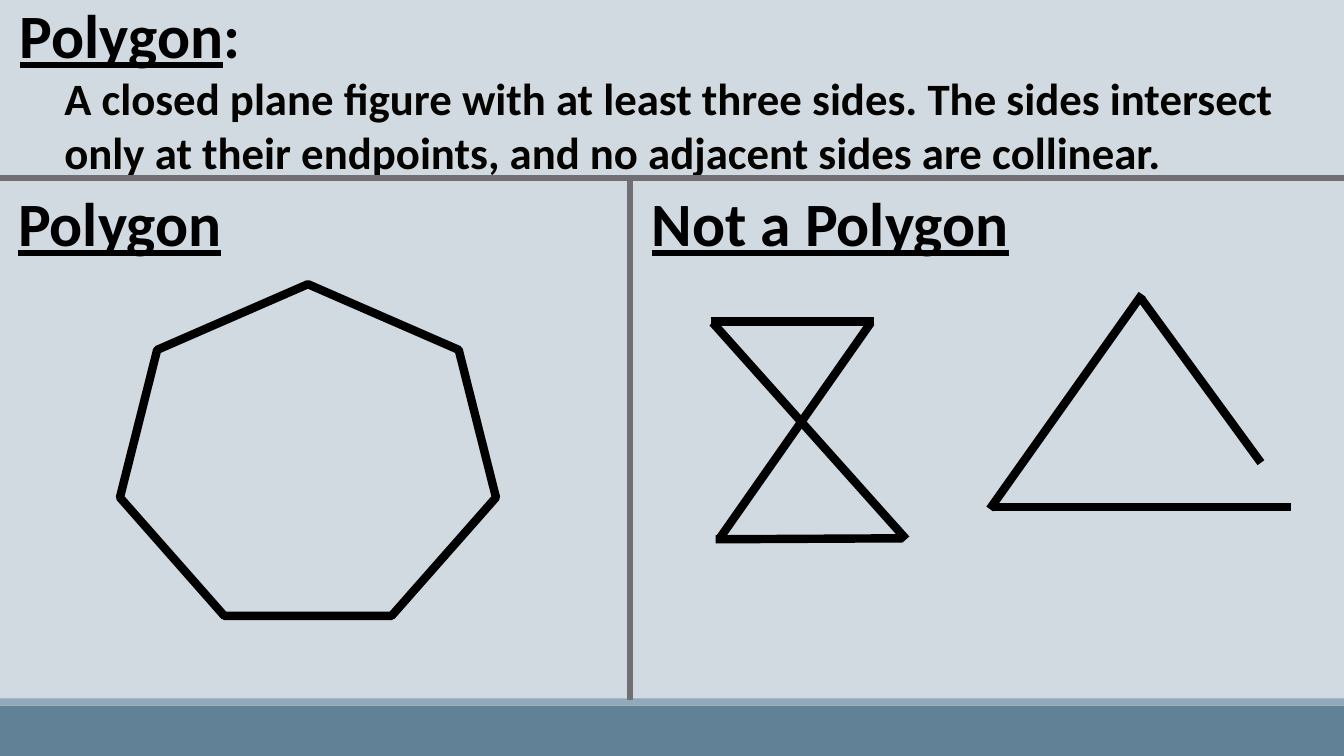
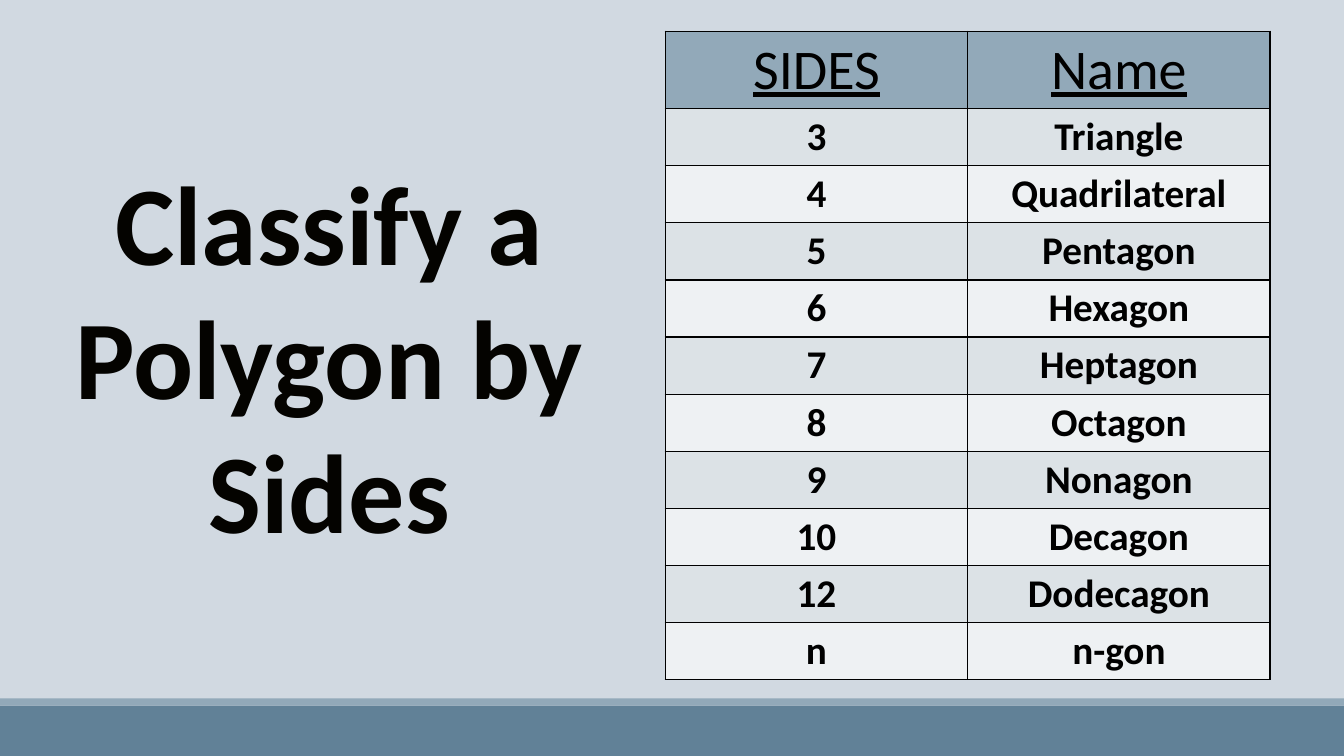
from pptx import Presentation
from pptx.dml.color import RGBColor
from pptx.enum.shapes import MSO_CONNECTOR, MSO_SHAPE
from pptx.enum.text import MSO_ANCHOR, MSO_AUTO_SIZE, PP_ALIGN
from pptx.oxml.ns import qn
from pptx.util import Pt
from lxml import etree

RECT, HEPTAGON = MSO_SHAPE.RECTANGLE, MSO_SHAPE.HEPTAGON
STRAIGHT = MSO_CONNECTOR.STRAIGHT
LEFT, CENTER = PP_ALIGN.LEFT, PP_ALIGN.CENTER
MIDDLE = MSO_ANCHOR.MIDDLE
GROW = MSO_AUTO_SIZE.SHAPE_TO_FIT_TEXT

WIDTH, HEIGHT = 960, 540
FONT = "Calibri"
BACKGROUND, BAND, ACCENT = "D1D9E1", "618197", "92A9B9"
BLACK, INK, RULE = "000000", "040300", "6F6F74"
STRIPES = "EEF1F3", "DCE2E6"


def color(value):
    return RGBColor.from_string(value)


def write(p, text, size, fill=BLACK, bold=True, underline=False, align=LEFT):
    p.alignment = align
    r = p.add_run()
    r.text = text
    r.font.name = FONT
    r.font.size = Pt(size)
    r.font.color.rgb = color(fill)
    r.font.bold = bold
    r.font.underline = underline


class Deck:
    def __init__(self):
        self.prs = Presentation()
        self.prs.slide_width, self.prs.slide_height = Pt(WIDTH), Pt(HEIGHT)
        fill = self.prs.slide_master.background.fill
        fill.solid()
        fill.fore_color.rgb = color(BACKGROUND)

    def slide(self):
        self.s = self.prs.slides.add_slide(self.prs.slide_layouts[6])
        self.shape(RECT, 0, 504, WIDTH, 36, BAND)
        self.shape(RECT, 0, 498.9, WIDTH, 5.1, ACCENT)

    def shape(self, kind, x, y, w, h, fill, line=None, weight=6):
        sp = self.s.shapes.add_shape(kind, Pt(x), Pt(y), Pt(w), Pt(h))
        sp.shadow.inherit = False
        sp.fill.solid()
        sp.fill.fore_color.rgb = color(fill)
        if line:
            sp.line.color.rgb = color(line)
            sp.line.width = Pt(weight)
        else:
            sp.line.fill.background()

    def line(self, x1, y1, x2, y2, stroke=BLACK, weight=6):
        sp = self.s.shapes.add_connector(STRAIGHT, Pt(x1), Pt(y1), Pt(x2), Pt(y2))
        sp.line.color.rgb = color(stroke)
        sp.line.width = Pt(weight)
        etree.SubElement(sp._element.spPr, qn("a:effectLst"))

    def text(self, text, x, y, w, h, size, wrap=True, **style):
        sp = self.s.shapes.add_textbox(Pt(x), Pt(y), Pt(w), Pt(h))
        tf = sp.text_frame
        tf.word_wrap = wrap
        tf.auto_size = GROW
        p = tf.paragraphs[0]
        write(p, text, size, **style)
        return p

    def heading(self, text, x, y, w):
        return self.text(text, x, y, w, 72.7, 44, wrap=False, underline=True)

    def border(self, cell):
        tcPr = cell._tc.get_or_add_tcPr()
        for side in ("a:lnL", "a:lnR", "a:lnT", "a:lnB"):
            ln = etree.SubElement(tcPr, qn(side), w=str(Pt(1)))
            fill = etree.SubElement(ln, qn("a:solidFill"))
            etree.SubElement(fill, qn("a:srgbClr"), val=BLACK)

    def table(self, rows, x, y, col_width, header_height, row_height):
        cols = len(rows[0])
        height = header_height + row_height * (len(rows) - 1)
        table = self.s.shapes.add_table(
            len(rows), cols, Pt(x), Pt(y), Pt(col_width * cols), Pt(height)).table
        for column in table.columns:
            column.width = Pt(col_width)
        for i, values in enumerate(rows):
            header = i == 0
            table.rows[i].height = Pt(header_height if header else row_height)
            for j, value in enumerate(values):
                cell = table.cell(i, j)
                self.border(cell)
                cell.fill.solid()
                cell.fill.fore_color.rgb = color(ACCENT if header else STRIPES[i % 2])
                cell.margin_top = cell.margin_bottom = Pt(3.3)
                cell.vertical_anchor = MIDDLE
                write(cell.text_frame.paragraphs[0], value, 40 if header else 28,
                      bold=not header, underline=header, align=CENTER)


deck = Deck()

deck.slide()
title = deck.heading("Polygon", 7.2, -5.8, 945)
write(title, ":", 44)
deck.text("A closed plane figure with at least three sides. The sides intersect "
          "only at their endpoints, and no adjacent sides are collinear.",
          38.9, 46.8, 882, 85, 32, fill=INK)
deck.line(WIDTH, 127.4, 0, 127.4, RULE, 4.5)
deck.line(450, 128.9, 450, 499.7, RULE, 4.5)
deck.heading("Polygon", 5.8, 128.9, 159.8)
deck.heading("Not a Polygon", 458.6, 128.9, 282.2)
deck.shape(HEPTAGON, 85.7, 203, 268.6, 236.9, BACKGROUND, BLACK)

crossed_sides = [
    (507.6, 229.7, 624.2, 229.7),
    (514.1, 384.5, 622.1, 230.4),
    (647.3, 385.2, 509, 230.4),
    (511.2, 385.2, 645.1, 384.5),
]
open_sides = [
    (707, 363.6, 815.8, 210.2),
    (709.9, 362.2, 922.3, 362.2),
    (900.7, 330.5, 815, 213.1),
]
for side in crossed_sides + open_sides:
    deck.line(*side)

deck.slide()
deck.text("Classify a Polygon by Sides", 44.6, 105.8, 381.6, 298, 80,
          fill=INK, align=CENTER)
polygons = [
    ("SIDES", "Name"),
    ("3", "Triangle"),
    ("4", "Quadrilateral"),
    ("5", "Pentagon"),
    ("6", "Hexagon"),
    ("7", "Heptagon"),
    ("8", "Octagon"),
    ("9", "Nonagon"),
    ("10", "Decagon"),
    ("12", "Dodecagon"),
    ("n", "n-gon"),
]
deck.table(polygons, 475.2, 22.3, 216, 55.3, 40.8)

deck.prs.save("out.pptx")
